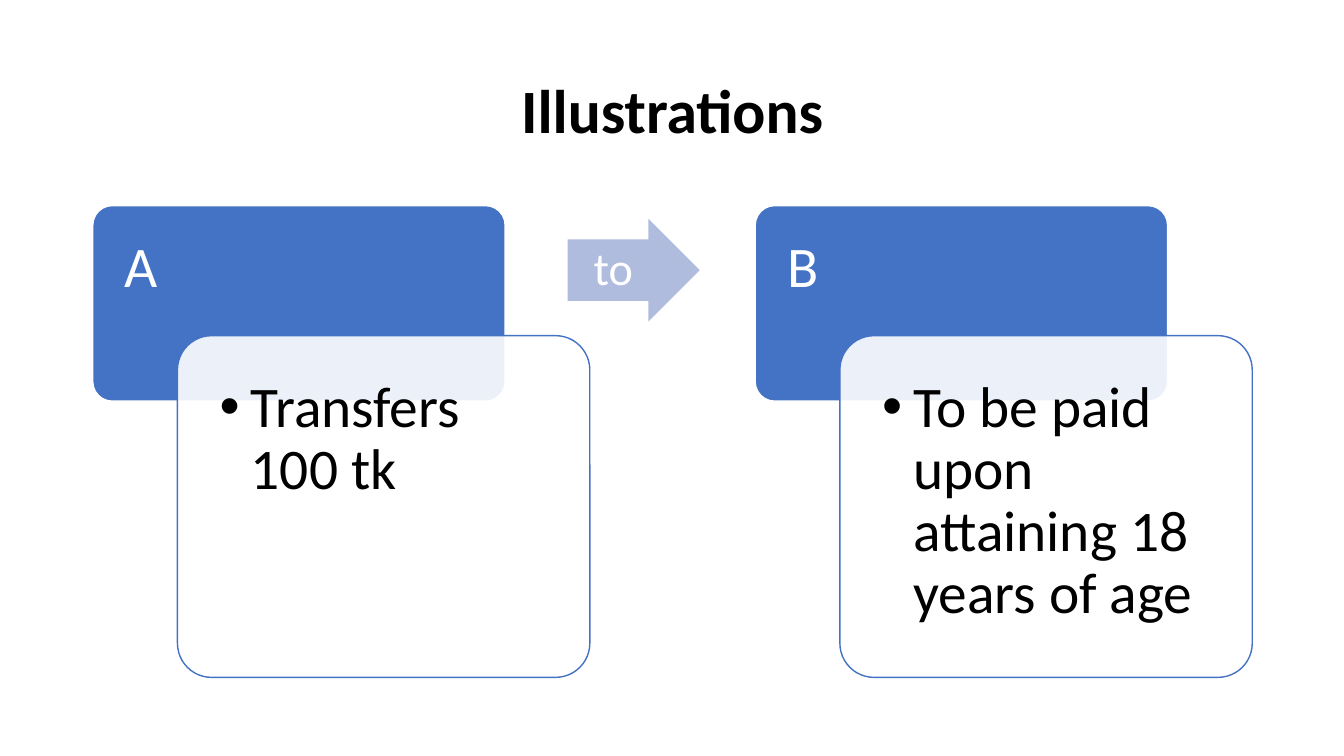
from pptx import Presentation
from pptx.dml.color import RGBColor
from pptx.enum.shapes import MSO_SHAPE as SHAPE
from pptx.enum.text import MSO_ANCHOR as ANCHOR, PP_ALIGN as ALIGN
from pptx.oxml.ns import qn
from pptx.util import Pt
from lxml import etree

PX = 9144  # EMU per px, 100 px to the inch
FONT = "Calibri"
BLACK = RGBColor(0x00, 0x00, 0x00)
WHITE = RGBColor(0xFF, 0xFF, 0xFF)
BLUE = RGBColor(0x44, 0x72, 0xC4)
PALE_BLUE = RGBColor(0xB0, 0xBC, 0xDE)


def px(*lengths):
    return [n * PX for n in lengths]


def set_text(sp, text, size, color, insets, anchor=ANCHOR.TOP, align=ALIGN.LEFT, bold=False):
    tf = sp.text_frame
    tf.word_wrap = True
    tf.vertical_anchor = anchor
    tf.margin_left, tf.margin_top, tf.margin_right, tf.margin_bottom = px(*insets)
    tf.text = text
    p = tf.paragraphs[0]
    p.alignment = align
    p.line_spacing = 0.9
    font = p.runs[0].font
    font.name, font.size, font.bold = FONT, Pt(size), bold
    font.color.rgb = color
    return p


def add_block(slide, kind, box, fill, line=None):
    sp = slide.shapes.add_shape(kind, *px(*box))
    sp.shadow.inherit = False
    sp.fill.solid()
    sp.fill.fore_color.rgb = fill
    if line is None:
        sp.line.fill.background()
    else:
        sp.line.color.rgb = line
        sp.line.width = Pt(1)
    return sp


def set_alpha(sp, percent):
    color = sp.fill._xPr.find(qn("a:solidFill"))[0]
    etree.SubElement(color, qn("a:alpha")).set("val", str(percent * 1000))


def set_bullet(p, indent):
    pPr = p._p.get_or_add_pPr()
    pPr.set("marL", str(indent * PX))
    pPr.set("indent", str(-indent * PX))
    etree.SubElement(pPr, qn("a:buFont")).set("typeface", "Arial")
    etree.SubElement(pPr, qn("a:buChar")).set("char", "•")


def add_title(slide, box, text):
    sp = slide.shapes.add_textbox(*px(*box))
    set_text(sp, text, 44, BLACK, (10, 5, 10, 5), ANCHOR.MIDDLE, ALIGN.CENTER, bold=True)


def add_party(slide, box, name, detail):
    x, y, w, h = box
    card_w, head_h, dx, dy = 409, 194, w - 409, 129

    # Header card
    head = add_block(slide, SHAPE.ROUNDED_RECTANGLE, (x, y, card_w, head_h), BLUE, WHITE)
    head.adjustments[0] = 0.1
    set_text(head, name, 41, WHITE, (26, 26, 26, 17))

    # Translucent detail card overlapping the header
    card = add_block(slide, SHAPE.ROUNDED_RECTANGLE, (x + dx, y + dy, card_w, h - dy), WHITE, BLUE)
    card.adjustments[0] = 0.1
    set_alpha(card, 90)
    set_bullet(set_text(card, detail, 41, BLACK, (32, 32, 32, 32)), 31)


def add_arrow(slide, box, label):
    sp = add_block(slide, SHAPE.RIGHT_ARROW, box, PALE_BLUE)
    sp.adjustments[0], sp.adjustments[1] = 0.6, 0.5
    set_text(sp, label, 33, WHITE, (0, 0, 10, 0), ANCHOR.MIDDLE, ALIGN.CENTER)


def main():
    prs = Presentation()
    prs.slide_width, prs.slide_height = px(1333, 750)
    slide = prs.slides.add_slide(prs.slide_layouts[6])

    add_title(slide, (92, 40, 1150, 145), "Illustrations")

    # Transfer from A to B
    parties = [("A", "Transfers 100 tk"),
               ("B", "To be paid upon attaining 18 years of age")]
    for i, (name, detail) in enumerate(parties):
        add_party(slide, (92 + 657 * i, 204, 493, 468), name, detail)
    add_arrow(slide, (563, 217, 131, 102), "to")

    prs.save("out.pptx")


if __name__ == "__main__":
    main()
